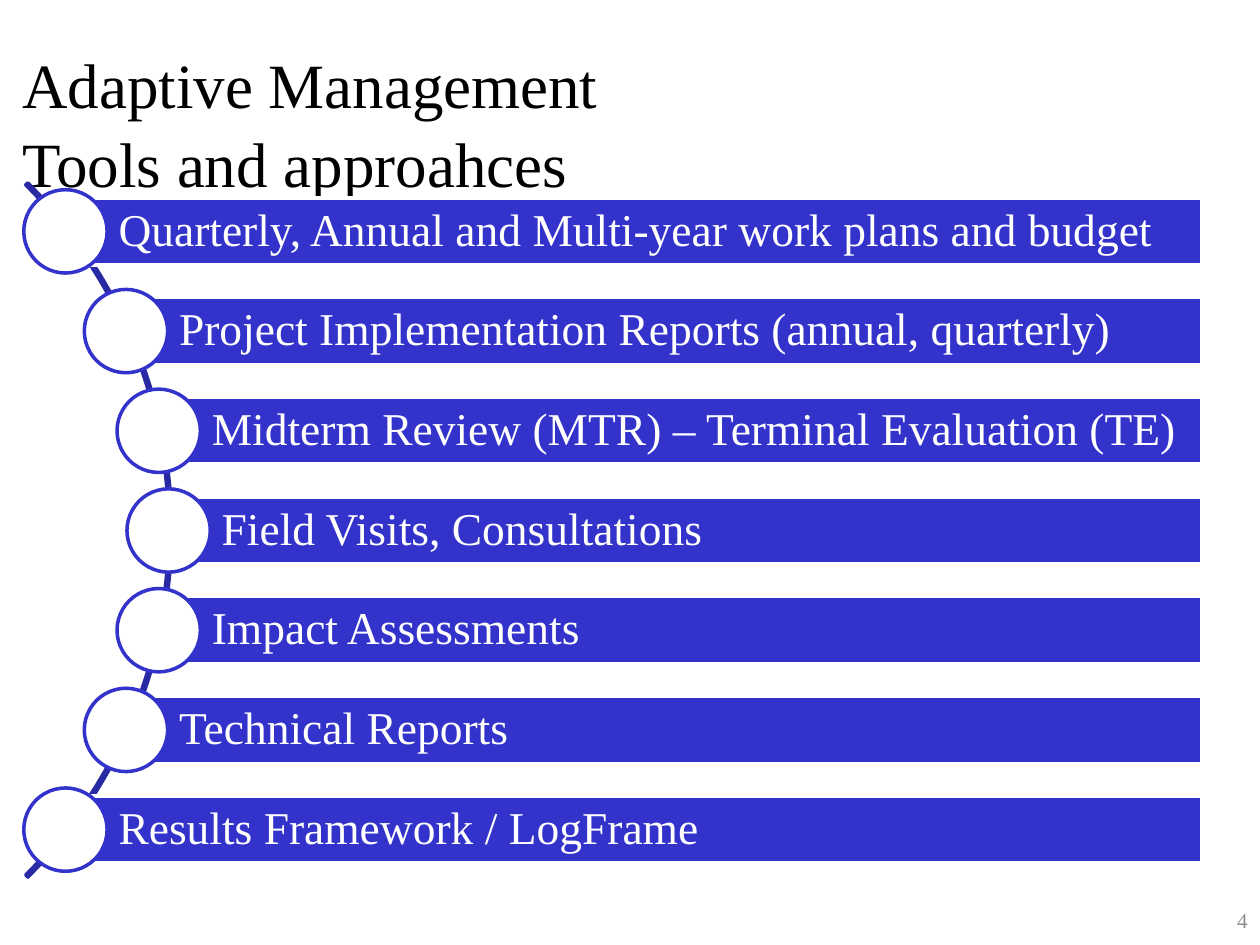
from pptx import Presentation
from pptx import util as u
from pptx.dml.color import RGBColor
from pptx.enum import shapes, text

INK = {"bar": "3333CC", "arc": "2929A3", "white": "FFFFFF",
       "title": "000000", "page": "8C8C8C"}
FONT = "Times New Roman"


def write(shape, words, size, ink, align=text.PP_ALIGN.LEFT,
          anchor=text.MSO_ANCHOR.MIDDLE, space=1.0, inset=(0.25, 0.13, 0.25, 0.13)):
    frame = shape.text_frame
    frame.word_wrap = True
    frame.vertical_anchor = anchor
    (frame.margin_left, frame.margin_top,
     frame.margin_right, frame.margin_bottom) = map(u.Cm, inset)
    frame.text = words
    for para in frame.paragraphs:
        para.alignment = align
        para.line_spacing = space
        para.font.name = FONT
        para.font.size = u.Pt(size)
        para.font.color.rgb = RGBColor.from_string(INK[ink])


def draw(kind, left, top, wide, high, fill, line):
    shape = slide.shapes.add_shape(kind, u.Cm(left), u.Cm(top), u.Cm(wide), u.Cm(high))
    shape.shadow.inherit = False
    if fill:
        shape.fill.solid()
        shape.fill.fore_color.rgb = RGBColor.from_string(INK[fill])
    else:
        shape.fill.background()
    shape.line.color.rgb = RGBColor.from_string(INK[line])
    shape.line.width = u.Pt(2)
    return shape


deck = Presentation()
deck.slide_width, deck.slide_height = u.Cm(25.4), u.Cm(19.05)
slide = deck.slides.add_slide(deck.slide_layouts[6])
kinds = shapes.MSO_SHAPE

# Title
title = slide.shapes.add_textbox(u.Cm(0.2), u.Cm(0.64), u.Cm(22.23), u.Cm(3.2))
write(title, "Adaptive Management\vTools and approahces", 36, "title",
      anchor=text.MSO_ANCHOR.TOP, space=1.05, inset=(0.25, 0.2, 0.25, 0.13))

# Arc behind the list
arc = draw(kinds.BLOCK_ARC, -16.33, 0.79, 19.79, 19.79, None, "arc")
for i, value in enumerate((189, 27, 0.003)):
    arc.adjustments[i] = value

# Bars, each with a circle centred on its left end
tools = [
    (1.32, "Quarterly, Annual and Multi-year work plans and budget"),
    (2.54, "Project Implementation Reports (annual, quarterly)"),
    (3.2, "Midterm Review (MTR) – Terminal Evaluation (TE)"),
    (3.4, "Field Visits, Consultations"),
    (3.2, "Impact Assessments"),
    (2.54, "Technical Reports"),
    (1.32, "Results Framework / LogFrame"),
]
FIRST, STEP, RIGHT = 3.99, 2.01, 24.23
HIGH, DOT = 1.35, 1.68
for i, (left, words) in enumerate(tools):
    top = FIRST + i * STEP
    bar = draw(kinds.RECTANGLE, left, top, RIGHT - left, HIGH, "bar", "white")
    write(bar, words, 26, "white", space=0.9, inset=(1.07, 0.18, 0.18, 0.18))
    draw(kinds.OVAL, left - DOT / 2, top + (HIGH - DOT) / 2, DOT, DOT, "white", "bar")

# Page number
page = slide.shapes.add_textbox(u.Cm(24.13), u.Cm(18.03), u.Cm(1.27), u.Cm(1.02))
write(page, "4", 12, "page", align=text.PP_ALIGN.RIGHT)

deck.save("out.pptx")
